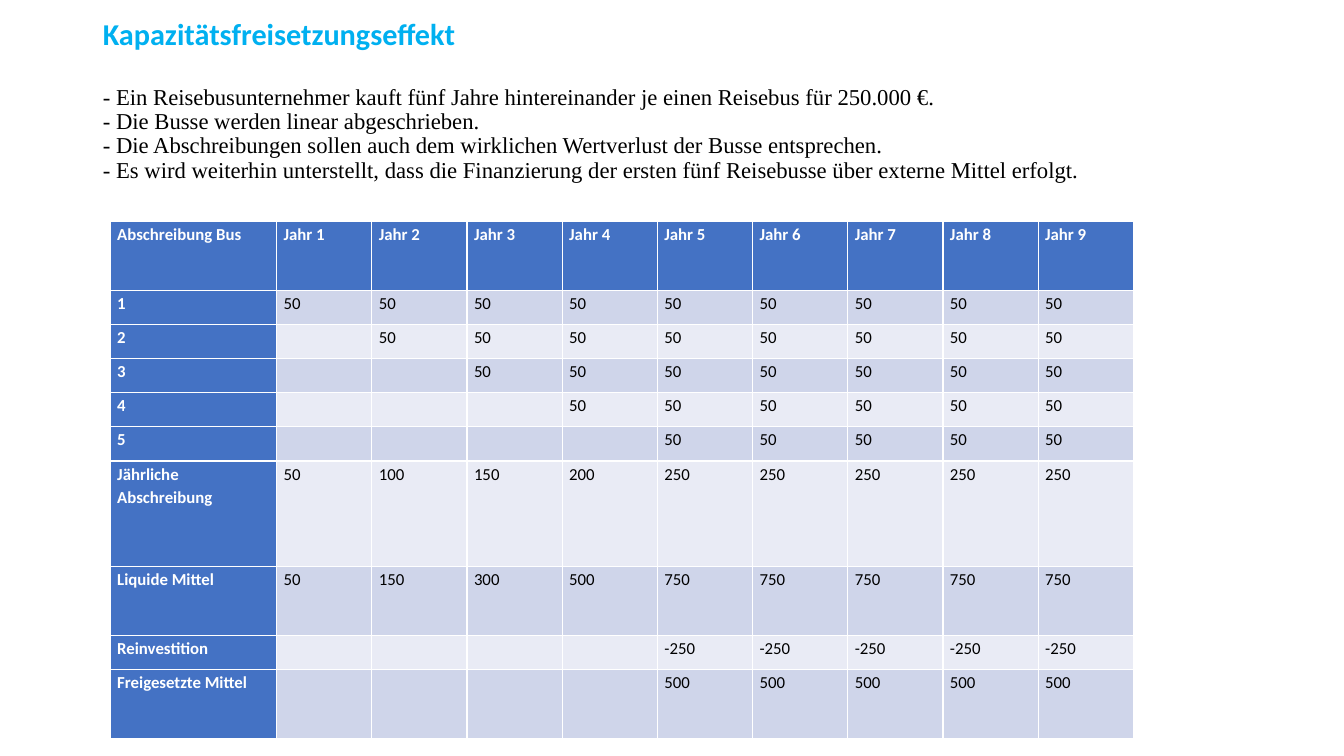
from pptx import Presentation
from pptx.dml.color import RGBColor
from pptx.enum.text import MSO_ANCHOR as Anchor, MSO_AUTO_SIZE as Fit, PP_ALIGN as Align
from pptx.util import Inches, Pt

WIDE, HIGH = Inches(13.33), Inches(7.5)
WHITE = RGBColor(0xFF, 0xFF, 0xFF)
BLACK = RGBColor(0, 0, 0)
CYAN = RGBColor(0x00, 0xB0, 0xF0)
BLUE = RGBColor(0x44, 0x72, 0xC4)
BANDS = (RGBColor(0xE9, 0xEB, 0xF5), RGBColor(0xCF, 0xD5, 0xEA))

HEAD = "Kapazitätsfreisetzungseffekt"
FACTS = (
    "- Ein Reisebusunternehmer kauft fünf Jahre hintereinander je einen Reisebus für 250.000 €.",
    "- Die Busse werden linear abgeschrieben.",
    "- Die Abschreibungen sollen auch dem wirklichen Wertverlust der Busse entsprechen.",
    "- Es wird weiterhin unterstellt, dass die Finanzierung der ersten fünf Reisebusse über externe Mittel erfolgt.",
)

YEARS, BUSES = 9, 5
ROWS = [["Abschreibung Bus"] + [f"Jahr {year}" for year in range(1, YEARS + 1)]]
ROWS += [[bus] + [""] * (bus - 1) + [50] * (YEARS + 1 - bus) for bus in range(1, BUSES + 1)]
ROWS += [
    ["Jährliche Abschreibung", 50, 100, 150, 200] + [250] * 5,
    ["Liquide Mittel", 50, 150, 300, 500] + [750] * 5,
    ["Reinvestition"] + [""] * 4 + [-250] * 5,
    ["Freigesetzte Mittel"] + [""] * 4 + [500] * 5,
]
TALL = [69] + [34] * BUSES + [105, 69, 34, 69]
BROAD = [165] + [94.4] * YEARS


def area(left, top, width, height):
    return [int(side * share / 100) for side, share in
            zip((WIDE, HIGH, WIDE, HIGH), (left, top, width, height))]


def write(para, text, font="Calibri", size=12, color=BLACK, bold=False,
          align=Align.LEFT, line=0.9, after=0):
    run = para.add_run()
    run.text = text
    run.font.name = font
    run.font.size = Pt(size)
    run.font.color.rgb = color
    run.font.bold = bold
    para.alignment = align
    para.line_spacing = line
    para.space_before = Pt(0)
    para.space_after = Pt(after)


def add_head(slide, box):
    title = slide.shapes.title
    title.left, title.top, title.width, title.height = box
    frame = title.text_frame
    frame.word_wrap = True
    frame.auto_size = Fit.NONE
    frame.vertical_anchor = Anchor.MIDDLE
    frame.margin_bottom = Inches(0.29)
    write(frame.paragraphs[0], HEAD, size=21.6, color=CYAN, bold=True, after=24)
    for fact in FACTS:
        write(frame.add_paragraph(), fact, font="Times New Roman", size=16.2)


def add_grid(slide, box):
    table = slide.shapes.add_table(len(TALL), len(BROAD), *box).table
    table.first_col = True
    for column, part in zip(table.columns, BROAD):
        column.width = int(box[2] * part / sum(BROAD))
    for row, part in zip(table.rows, TALL):
        row.height = int(box[3] * part / sum(TALL))
    for r, values in enumerate(ROWS):
        for c, value in enumerate(values):
            cell = table.cell(r, c)
            label = r == 0 or c == 0
            cell.fill.solid()
            cell.fill.fore_color.rgb = BLUE if label else BANDS[r % 2]
            cell.margin_left = cell.margin_right = Inches(0.07)
            cell.margin_top = cell.margin_bottom = 0
            if value != "":
                write(cell.text_frame.paragraphs[0], str(value), bold=label,
                      color=WHITE if label else BLACK,
                      align=Align.JUSTIFY, line=1.15, after=10)


def main():
    deck = Presentation()
    deck.slide_width, deck.slide_height = WIDE, HIGH
    slide = deck.slides.add_slide(deck.slide_layouts[5])
    add_head(slide, area(6.9, 5.33, 86.27, 19.33))
    add_grid(slide, area(8.2, 29.25, 76.14, 68.53))
    deck.save("out.pptx")


if __name__ == "__main__":
    main()
